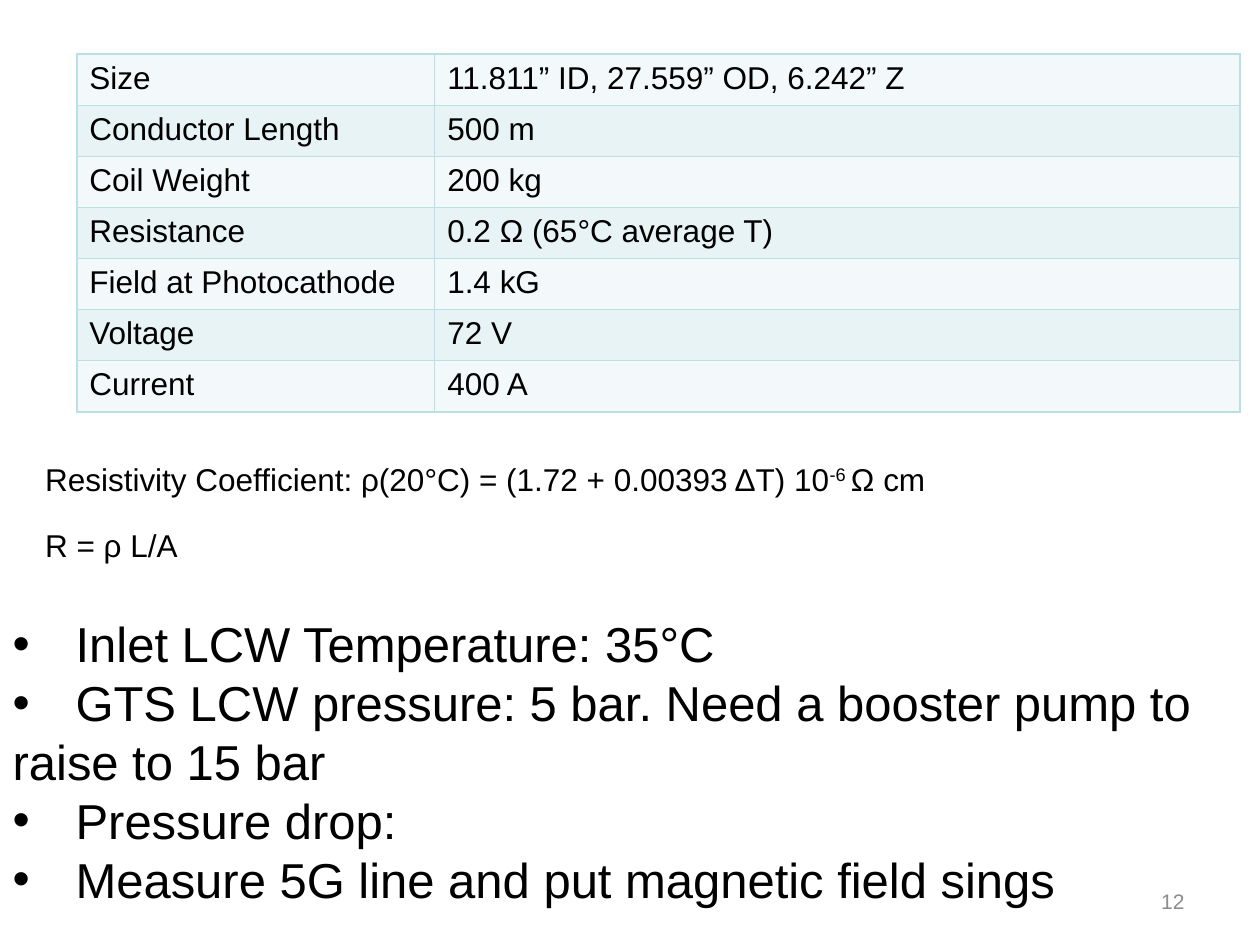
from dataclasses import dataclass

from lxml.etree import SubElement
from pptx import Presentation
from pptx.dml.color import RGBColor
from pptx.enum.text import MSO_ANCHOR as Anchor, MSO_AUTO_SIZE as AutoSize, PP_ALIGN as Align
from pptx.oxml import parse_xml
from pptx.oxml.ns import nsdecls, qn
from pptx.util import Inches, Pt

WIDTH, HEIGHT = 10, 7.5
COLORS = {"text": "000000", "number": "8C8C8C", "border": "BBE0E3",
          "odd_row": "F3F9FA", "even_row": "E7F3F4"}
COLUMN_WIDTHS = (2.84, 6.39)
ROW_HEIGHT = 2.84 / 7
INDENT = 0.5

COIL_DATA = (
    ("Size", "11.811” ID, 27.559” OD, 6.242” Z"),
    ("Conductor Length", "500 m"),
    ("Coil Weight", "200 kg"),
    ("Resistance", "0.2 Ω (65°C average T)"),
    ("Field at Photocathode", "1.4 kG"),
    ("Voltage", "72 V"),
    ("Current", "400 A"),
)


@dataclass(frozen=True)
class Area:
    """A place on the slide, as shares of its width and height."""
    left: float
    top: float
    width: float
    height: float

    def lengths(self) -> tuple:
        return tuple(Inches(share * side) for share, side in zip(
            (self.left, self.top, self.width, self.height), (WIDTH, HEIGHT) * 2))


@dataclass(frozen=True)
class Run:
    text: str
    baseline: int = 0


@dataclass(frozen=True)
class Label:
    area: Area
    runs: tuple
    size: int = 18
    color: str = "text"
    align: Align = Align.LEFT
    anchor: Anchor = Anchor.TOP
    wrap: bool = False


@dataclass(frozen=True)
class ListLine:
    text: str
    bulleted: bool = True


LABELS = (
    Label(Area(0.026, 0.48, 0.737, 0.053), (
        Run("Resistivity Coefficient: ρ(20°C) = (1.72 + 0.00393 ΔT) 10"),
        Run("-6 ", 30), Run("Ω cm"))),
    Label(Area(0.026, 0.55, 0.126, 0.053), (Run("R = ρ L/A"),)),
    Label(Area(0.717, 0.927, 0.233, 0.053), (Run("12"),), 12, "number",
          Align.RIGHT, Anchor.MIDDLE, True),
)
NOTES_AREA = Area(0, 0.643, 0.967, 0.328)
COOLING_NOTES = (
    ListLine("Inlet LCW Temperature: 35°C"),
    ListLine("GTS LCW pressure: 5 bar. Need a booster pump to"),
    ListLine("raise to 15 bar", bulleted=False),
    ListLine("Pressure drop:"),
    ListLine("Measure 5G line and put magnetic field sings"),
)


def set_all(target, values: dict) -> None:
    for name, value in values.items():
        setattr(target, name, value)


def format_font(font, size: int, color: str = "text") -> None:
    set_all(font, {"name": "Arial", "size": Pt(size)})
    font.color.rgb = RGBColor.from_string(COLORS[color])


def add_borders(cell) -> None:
    properties = cell._tc.get_or_add_tcPr()
    for position, side in enumerate("LRTB"):
        properties.insert(position, parse_xml(
            f'<a:ln{side} {nsdecls("a")} w="12700"><a:solidFill>'
            f'<a:srgbClr val="{COLORS["border"]}"/></a:solidFill></a:ln{side}>'))


def add_coil_table(slide) -> None:
    rows, columns = len(COIL_DATA), len(COLUMN_WIDTHS)
    table = slide.shapes.add_table(
        rows, columns, Inches(0.61), Inches(0.43),
        Inches(sum(COLUMN_WIDTHS)), Inches(ROW_HEIGHT * rows)).table
    set_all(table, {"first_row": False, "horz_banding": False})
    for column, width in zip(table.columns, COLUMN_WIDTHS):
        column.width = Inches(width)
    for row_index, row in enumerate(COIL_DATA):
        color = COLORS["even_row" if row_index % 2 else "odd_row"]
        for column_index, text in enumerate(row):
            cell = table.cell(row_index, column_index)
            cell.text = text
            format_font(cell.text_frame.paragraphs[0].runs[0].font, 18)
            cell.fill.solid()
            cell.fill.fore_color.rgb = RGBColor.from_string(color)
            add_borders(cell)


def add_label(slide, label: Label) -> None:
    frame = slide.shapes.add_textbox(*label.area.lengths()).text_frame
    set_all(frame, {"word_wrap": label.wrap, "vertical_anchor": label.anchor})
    paragraph = frame.paragraphs[0]
    paragraph.alignment = label.align
    for part in label.runs:
        run = paragraph.add_run()
        run.text = part.text
        format_font(run.font, label.size, label.color)
        if part.baseline:
            run.font._element.set("baseline", str(part.baseline * 1000))


def set_bullet(paragraph, bulleted: bool) -> None:
    properties = paragraph._p.get_or_add_pPr()
    indent = Inches(INDENT) if bulleted else 0
    properties.set("marL", str(indent))
    properties.set("indent", str(-indent))
    if bulleted:
        SubElement(properties, qn("a:buFont"), typeface="Arial")
        SubElement(properties, qn("a:buChar"), char="•")
    else:
        SubElement(properties, qn("a:buNone"))


def fill_notes(body) -> None:
    set_all(body, dict(zip(("left", "top", "width", "height"), NOTES_AREA.lengths())))
    frame = body.text_frame
    set_all(frame, {"word_wrap": False, "auto_size": AutoSize.NONE,
                    "vertical_anchor": Anchor.TOP})
    frame.text = "\n".join(line.text for line in COOLING_NOTES)
    for paragraph, line in zip(frame.paragraphs, COOLING_NOTES):
        set_bullet(paragraph, line.bulleted)
        set_all(paragraph, {"space_before": Pt(0), "alignment": Align.LEFT})
        format_font(paragraph.runs[0].font, 28)


def main() -> None:
    presentation = Presentation()
    set_all(presentation, {"slide_width": Inches(WIDTH), "slide_height": Inches(HEIGHT)})
    slide = presentation.slides.add_slide(presentation.slide_layouts[1])
    title = slide.shapes.title._element
    title.getparent().remove(title)
    add_coil_table(slide)
    fill_notes(slide.placeholders[1])
    for label in LABELS:
        add_label(slide, label)
    presentation.save("out.pptx")


if __name__ == "__main__":
    main()
